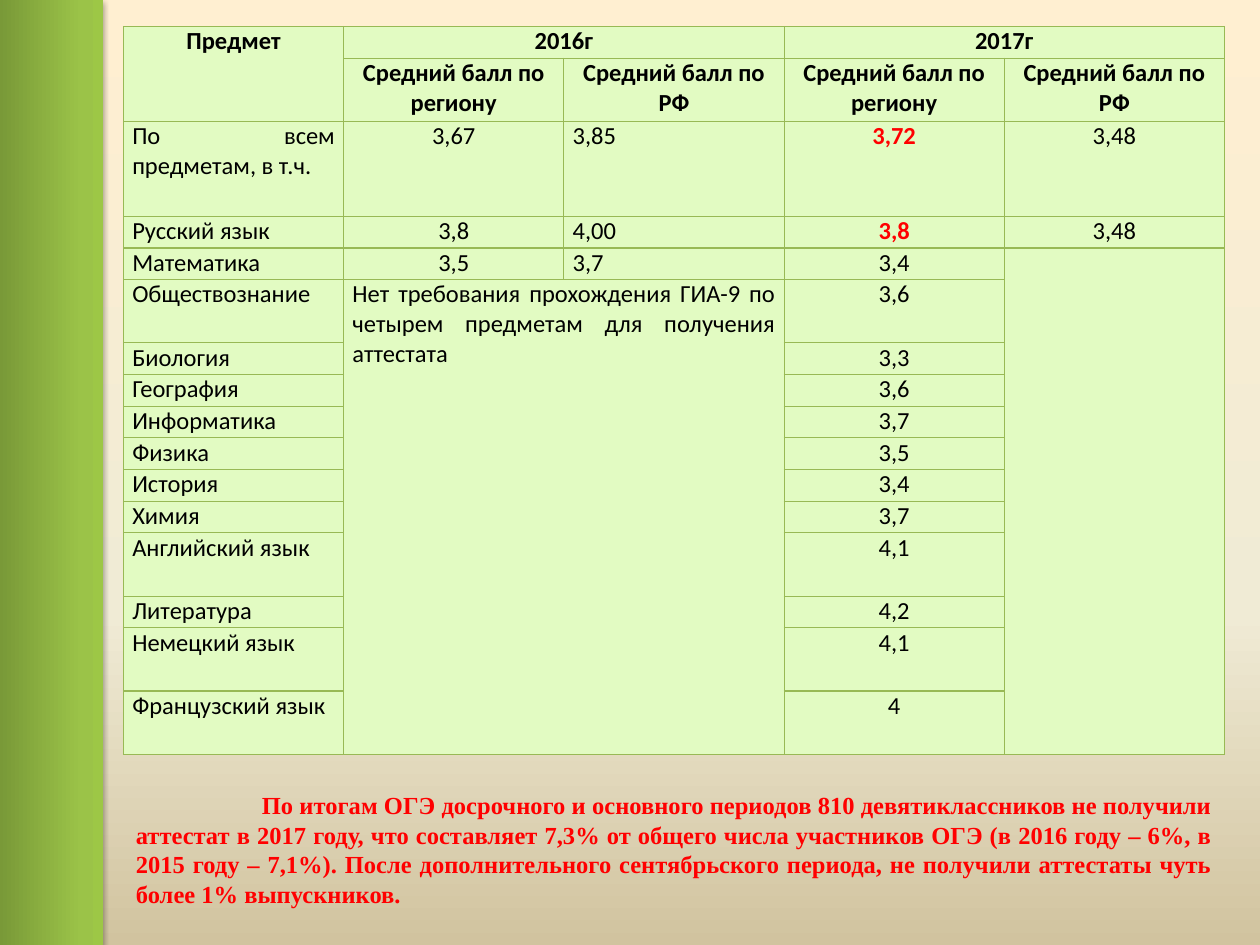
from pptx import Presentation
from pptx import util as u
from pptx.dml import color
from pptx.enum import shapes, text
from pptx.oxml import ns, parse_xml

BLACK, RED = "000000", "FF0000"
MINT, OLIVE = "E2FBC2", "98B955"
CENTER, JUST = text.PP_ALIGN.CENTER, text.PP_ALIGN.JUSTIFY

REGION, NATION = "Средний балл по региону", "Средний балл по РФ"
HEADS = [
    ["Предмет", "2016г", "", "2017г", ""],
    ["", REGION, NATION, REGION, NATION],
]
SCORES = [
    ["По всем предметам, в т.ч.", "3,67", "3,85", "3,72", "3,48"],
    ["Русский язык", "3,8", "4,00", "3,8", "3,48"],
    ["Математика", "3,5", "3,7", "3,4", ""],
]
WAIVER = ("Нет требования прохождения ГИА-9 по четырем предметам "
          "для получения аттестата")
ELECTIVES = {
    "Обществознание": "3,6", "Биология": "3,3", "География": "3,6",
    "Информатика": "3,7", "Физика": "3,5", "История": "3,4",
    "Химия": "3,7", "Английский язык": "4,1", "Литература": "4,2",
    "Немецкий язык": "4,1", "Французский язык": "4",
}
LINES = [1, 2, 3, 1, 1, 2, 1, 1, 1, 1, 1, 1, 2, 1, 2, 2]
MERGES = [(0, 0, 1, 0), (0, 1, 0, 2), (0, 3, 0, 4),
          (4, 4, 15, 4), (5, 1, 15, 2)]
SUMMARY = (
    "По итогам ОГЭ досрочного и основного периодов 810 девятиклассников "
    "не получили аттестат в 2017 году, что составляет 7,3% от общего числа "
    "участников ОГЭ (в 2016 году – 6%, в 2015 году – 7,1%). После "
    "дополнительного сентябрьского периода, не получили аттестаты чуть "
    "более 1% выпускников."
)


def rgb(code):
    return color.RGBColor.from_string(code)


def assign(item, values):
    for name, value in values.items():
        setattr(item, name, value)


def node(tag, inner="", **attrs):
    """Make a drawing element from its tag, inner markup and attributes."""
    pairs = "".join(f' {key}="{val}"' for key, val in attrs.items())
    return parse_xml(f'<a:{tag} {ns.nsdecls("a")}{pairs}>{inner}</a:{tag}>')


def shade(root, stops, angle):
    """Replace the solid fill below root with a linear gradient."""
    marks = "".join(
        f'<a:gs pos="{pos * 1000}"><a:srgbClr val="{code}"/></a:gs>'
        for pos, code in stops)
    grad = node("gradFill", f'<a:gsLst>{marks}</a:gsLst>'
                f'<a:lin ang="{angle * 60000}" scaled="0"/>', rotWithShape=1)
    old = next(root.iter(ns.qn("a:solidFill")))
    old.getparent().replace(old, grad)


class Deck:
    """Holds the text style and the current slide."""

    def __init__(self):
        self.show = Presentation()
        assign(self.show, {"slide_width": u.Inches(10),
                           "slide_height": u.Inches(7.5)})
        self.slide = self.show.slides.add_slide(self.show.slide_layouts[6])
        self.style = {"name": "Calibri", "size": u.Pt(14), "bold": False}

    def backdrop(self, stops, angle):
        fill = self.slide.background.fill
        fill.solid()
        fill.fore_color.rgb = rgb(BLACK)
        shade(self.slide.element, stops, angle)

    def label(self, frame, words, align, tint=BLACK, **style):
        para = frame.paragraphs[0]
        para.alignment = align
        run = para.add_run()
        run.text = words
        assign(run.font, {**self.style, **style})
        run.font.color.rgb = rgb(tint)
        return para

    def cell(self, cell):
        """Give a cell its margins, fill and borders."""
        side = u.Inches(0.07)
        assign(cell, {"margin_left": side, "margin_right": side,
                      "margin_top": 0, "margin_bottom": 0})
        props = cell._tc.get_or_add_tcPr()
        ink = f'<a:solidFill><a:srgbClr val="{OLIVE}"/></a:solidFill>'
        for edge in ("lnL", "lnR", "lnT", "lnB"):
            props.append(node(edge, ink, w=u.Pt(0.75)))
        cell.fill.solid()
        cell.fill.fore_color.rgb = rgb(MINT)

    def table(self, rows, box):
        frame = self.slide.shapes.add_table(
            len(rows), len(rows[0]), *map(u.Inches, box))
        grid = frame.table
        assign(grid, {"first_row": False, "horz_banding": False})
        unit = u.Inches(box[3] / sum(LINES))
        for row, count in zip(grid.rows, LINES):
            row.height = unit * count
        for r, row in enumerate(rows):
            for c, words in enumerate(row):
                cell = grid.cell(r, c)
                self.cell(cell)
                head, best = r < 2, c == 3 and r in (2, 3)
                mid = head or c in (1, 3, 4) and words != WAIVER
                if words:
                    self.label(cell.text_frame, words,
                               CENTER if mid else JUST,
                               RED if best else BLACK, bold=head or best)
        for top, left, low, right in MERGES:
            grid.cell(top, left).merge(grid.cell(low, right))

    def note(self, words, box):
        frame = self.slide.shapes.add_textbox(*map(u.Inches, box)).text_frame
        assign(frame, {"word_wrap": True,
                       "vertical_anchor": text.MSO_ANCHOR.MIDDLE})
        para = self.label(frame, words, JUST, RED,
                          name="Times New Roman", bold=True)
        para._p.get_or_add_pPr().set("indent", str(u.Inches(1)))

    def band(self, box, stops, angle):
        bar = self.slide.shapes.add_shape(
            shapes.MSO_SHAPE.RECTANGLE, *map(u.Inches, box))
        bar.rotation = 90
        bar.fill.solid()
        bar.fill.fore_color.rgb = rgb(BLACK)
        shade(bar._element.spPr, stops, angle)
        bar.line.fill.background()
        bar.shadow.inherit = False
        glow = node("outerShdw", f'<a:srgbClr val="{BLACK}">'
                    '<a:alpha val="35000"/></a:srgbClr>',
                    blurRad=u.Pt(3.1), dist=u.Pt(1.8), dir=90 * 60000,
                    rotWithShape=0)
        bar._element.spPr.find(ns.qn("a:effectLst")).append(glow)


def main():
    deck = Deck()
    deck.backdrop([(0, "FFEFD1"), (65, "F0EBD5"), (100, "D1C39F")], 90)
    rows = HEADS + SCORES + [
        [name, "", "", score, ""] for name, score in ELECTIVES.items()]
    rows[5][1] = WAIVER
    deck.table(rows, (0.98, 0.21, 8.74, 5.78))
    deck.note(SUMMARY, (0.98, 6.22, 8.74, 1.04))
    deck.band((-3.36, 3.32, 7.5, 0.86),
              [(0, "779737"), (80, "9BC348"), (100, "9DC746")], 270)
    deck.show.save("out.pptx")


if __name__ == "__main__":
    main()
